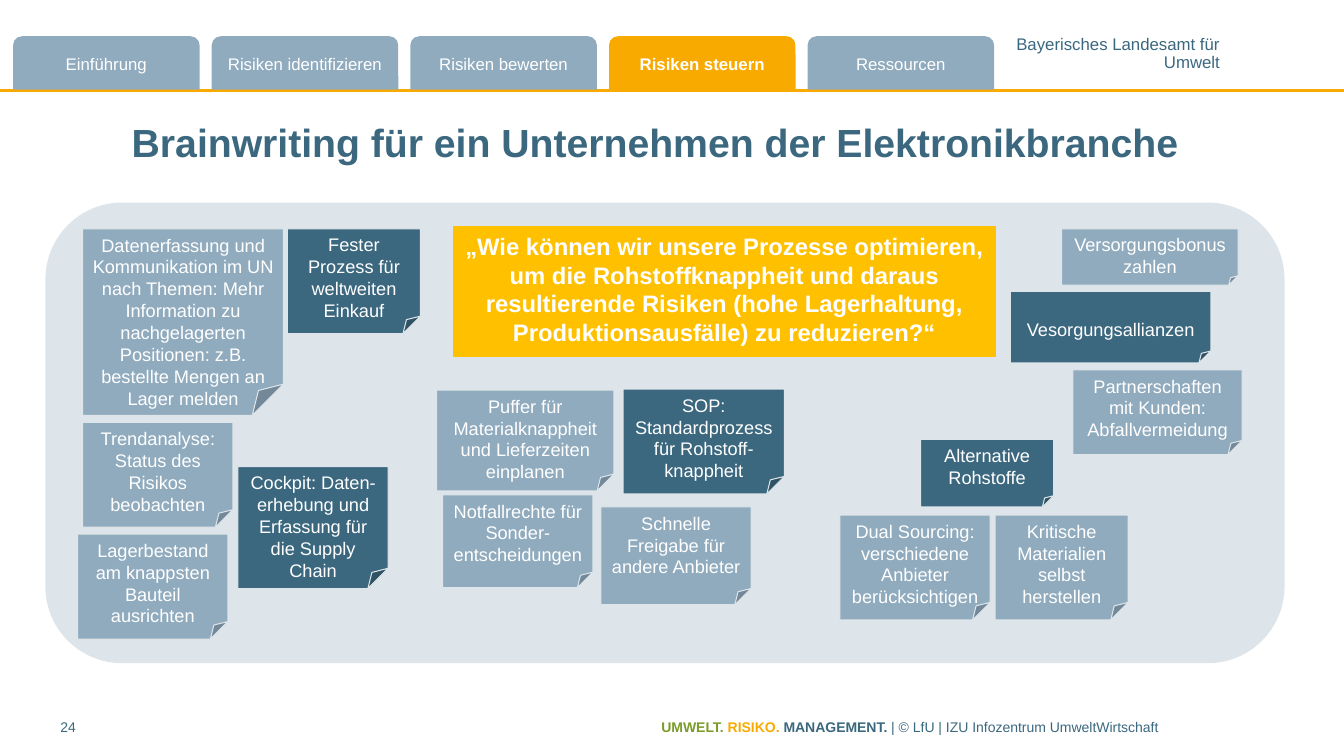
from lxml import etree
from pptx import Presentation
from pptx import util as u
from pptx.dml.color import RGBColor
from pptx.enum import shapes, text
from pptx.oxml.ns import qn

COLORS = {
    "dark": "3B687F",
    "mid": "90ABBE",
    "pale": "DEE5EA",
    "orange": "F9AA00",
    "amber": "FFC000",
    "green": "7B9C2A",
    "white": "FFFFFF",
}

TABS = ["Einführung", "Risiken identifizieren", "Risiken bewerten", "Risiken steuern", "Ressourcen"]
ACTIVE_TAB = "Risiken steuern"

QUESTION = (
    "„Wie können wir unsere Prozesse optimieren, um die Rohstoffknappheit und daraus "
    "resultierende Risiken (hohe Lagerhaltung, Produktionsausfälle) zu reduzieren?“"
)

NOTES = {
    "dark": [
        ((2.36, 4.63, 1.49, 1.21), "Cockpit: Daten-erhebung und Erfassung für die Supply Chain"),
        ((2.85, 2.27, 1.32, 1.04), "Fester Prozess für weltweiten Einkauf"),
        ((6.18, 3.86, 1.6, 1.04), "SOP: Standardprozess für Rohstoff-knappheit"),
        ((10.02, 2.89, 1.99, 0.71), "Vesorgungsallianzen"),
        ((9.13, 4.36, 1.32, 0.67), "Alternative Rohstoffe"),
    ],
    "mid": [
        ((0.82, 4.19, 1.49, 1.04), "Trendanalyse: Status des Risikos beobachten"),
        ((0.77, 5.3, 1.49, 1.04), "Lagerbestand am knappsten Bauteil ausrichten"),
        ((0.82, 2.27, 1.99, 1.85),
         "Datenerfassung und Kommunikation im UN nach Themen: Mehr Information zu "
         "nachgelagerten Positionen: z.B. bestellte Mengen an Lager melden"),
        ((4.33, 3.87, 1.76, 1), "Puffer für Materialknappheit und Lieferzeiten einplanen"),
        ((8.33, 5.11, 1.49, 1.04), "Dual Sourcing: verschiedene Anbieter berücksichtigen"),
        ((5.96, 5.03, 1.49, 0.97), "Schnelle Freigabe für andere Anbieter"),
        ((4.39, 4.91, 1.49, 0.92), "Notfallrechte für Sonder-entscheidungen"),
        ((9.87, 5.11, 1.32, 1.04), "Kritische Materialien selbst herstellen"),
        ((10.64, 3.67, 1.68, 0.84), "Partnerschaften mit Kunden: Abfallvermeidung"),
        ((10.53, 2.27, 1.75, 0.56), "Versorgungsbonus zahlen"),
    ],
}
LOWERED_NOTE = "Vesorgungsallianzen"


class SlideBuilder:
    """Holds the font, the colours and the slide being filled."""

    def __init__(self, slide, font="Arial"):
        self.slide = slide
        self.font = font

    def color(self, name):
        return RGBColor.from_string(COLORS[name])

    def set_text(self, shape, paragraphs, size, align="CENTER", anchor="TOP",
                 insets=(0.1, 0.05, 0.1, 0.05), spacing=None, wrap=True):
        frame = shape.text_frame
        frame.auto_size = text.MSO_AUTO_SIZE.NONE
        frame.word_wrap = wrap
        frame.vertical_anchor = text.MSO_ANCHOR[anchor]
        (frame.margin_left, frame.margin_top,
         frame.margin_right, frame.margin_bottom) = map(u.Inches, insets)
        for index, runs in enumerate(paragraphs):
            paragraph = frame.add_paragraph() if index else frame.paragraphs[0]
            paragraph.alignment = text.PP_ALIGN[align]
            if spacing:
                paragraph.line_spacing = spacing
            for words, color, bold in runs:
                run = paragraph.add_run()
                run.text = words
                run.font.name = self.font
                run.font.size = u.Pt(size)
                run.font.bold = bold
                run.font.color.rgb = self.color(color)

    def title(self, box, words, size):
        title = self.slide.shapes.title
        title.left, title.top, title.width, title.height = map(u.Inches, box)
        self.set_text(title, [[(words, "dark", True)]], size, anchor="MIDDLE",
                      insets=(0, 0.05, 0, 0.05))

    def label(self, box, paragraphs, size, **layout):
        shape = self.slide.shapes.add_textbox(*map(u.Inches, box))
        self.set_text(shape, paragraphs, size, **layout)

    def shape(self, kind, box, fill, line=None):
        shape = self.slide.shapes.add_shape(shapes.MSO_SHAPE[kind], *map(u.Inches, box))
        shape.shadow.inherit = False
        shape.fill.solid()
        shape.fill.fore_color.rgb = self.color(fill)
        if line:
            shape.line.color.rgb = self.color(line)
            shape.line.width = u.Pt(0.75)
        else:
            shape.line.fill.background()
        return shape

    def tab(self, box, words, active):
        shape = self.shape("ROUND_2_SAME_RECTANGLE", box, "orange" if active else "mid")
        self.set_text(shape, [[(words, "white", active)]], 12, anchor="MIDDLE",
                      insets=(0.04, 0.05, 0.04, 0.05))

    def note(self, box, words, fill):
        shape = self.shape("FOLDED_CORNER", box, fill, "pale")
        top = 0.27 if words == LOWERED_NOTE else 0.05
        self.set_text(shape, [[(words, "white", False)]], 13, insets=(0.1, top, 0.1, 0.05))

    def rule(self, start, end, color, width):
        line = self.slide.shapes.add_connector(
            shapes.MSO_CONNECTOR.STRAIGHT, *map(u.Inches, start + end))
        line.line.color.rgb = self.color(color)
        line.line.width = u.Pt(width)
        etree.SubElement(line._element.spPr, qn("a:effectLst"))


def main():
    presentation = Presentation()
    presentation.slide_width = u.Inches(13.33)
    presentation.slide_height = u.Inches(7.5)
    builder = SlideBuilder(presentation.slides.add_slide(presentation.slide_layouts[5]))

    builder.rule((0, 0.9), (13.33, 0.9), "orange", 2)
    builder.label((10.07, 0.37, 2.03, 0.34),
                  [[("Bayerisches Landesamt für", "dark", False)], [("Umwelt", "dark", False)]],
                  12, align="RIGHT", insets=(0, 0, 0, 0), spacing=0.85, wrap=False)
    for index, words in enumerate(TABS):
        builder.tab((0.13 + 1.97 * index, 0.36, 1.85, 0.53), words, words == ACTIVE_TAB)

    builder.title((0.45, 1.13, 12.2, 0.55),
                  "Brainwriting für ein Unternehmen der Elektronikbranche ", 28)

    builder.shape("ROUNDED_RECTANGLE", (0.45, 2.01, 12.29, 4.57), "pale")
    question = builder.shape("RECTANGLE", (4.5, 2.25, 5.37, 1.29), "amber", "amber")
    builder.set_text(question, [[(QUESTION, "white", True)]], 17)
    for fill, notes in NOTES.items():
        for box, words in notes:
            builder.note(box, words, fill)

    footer = [
        ("UMWELT. ", "green", True),
        ("RISIKO. ", "orange", True),
        ("MANAGEMENT. ", "dark", True),
        ("| © LfU | IZU Infozentrum UmweltWirtschaft", "dark", False),
    ]
    for box, runs in (((6.56, 7.08, 6.36, 0.31), footer),
                      ((0.6, 7.08, 0.7, 0.31), [("24", "dark", False)])):
        builder.label(box, [runs], 10, align="LEFT", insets=(0, 0.05, 0, 0.05))

    presentation.save("out.pptx")


if __name__ == "__main__":
    main()
